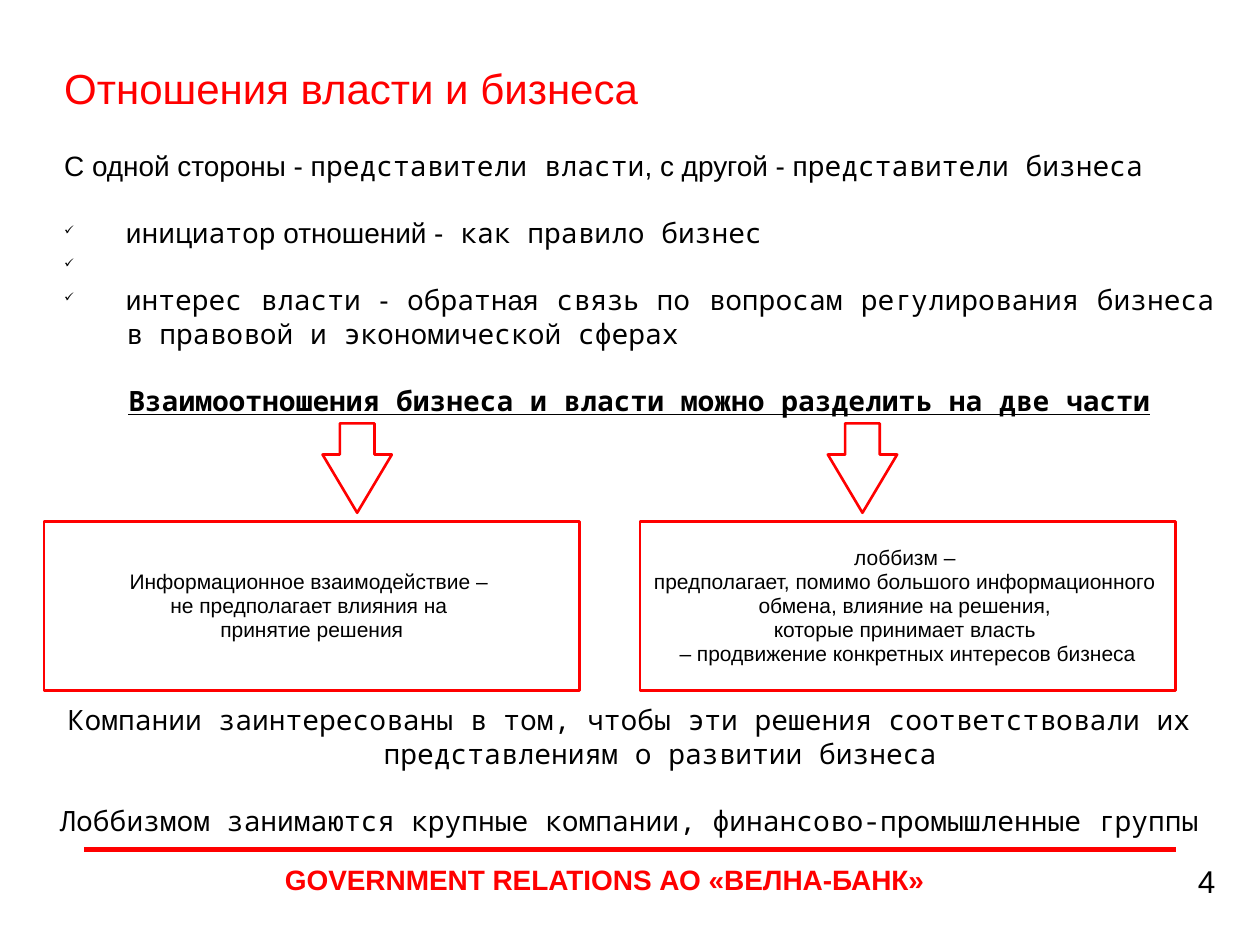
from lxml.etree import SubElement as Sub
from pptx import Presentation
from pptx.dml.color import RGBColor as RGB
from pptx.enum.shapes import MSO_CONNECTOR as CONN, MSO_SHAPE as SHAPE
from pptx.enum.text import MSO_ANCHOR as ANCHOR, PP_ALIGN as ALIGN
from pptx.oxml.ns import qn
from pptx.util import Inches, Pt

THEME = {
    "red": RGB(255, 0, 0), "black": RGB(0, 0, 0),
    "sans": "Arial", "mono": "Noto Sans Mono",
    "title": 24, "body": 16, "box": 12, "number": 18,
    "gap": 19, "outline": 1.5, "rule": 2.75,
}
SANS, MONO = THEME["sans"], THEME["mono"]

TITLE = "Отношения власти и бизнеса"
SIDES = [("С одной стороны - п", SANS), ("редставители власти", MONO),
         (", с другой - п", SANS), ("редставители бизнеса", MONO)]
POINTS = [
    [("и", SANS), ("нициатор", MONO), (" отношений -", SANS),
     (" как правило бизнес", MONO)],
    [(" ", MONO)],
    [("и", SANS), ("нтерес власти ", MONO), ("-", SANS), (" обратн", MONO),
     ("ая", SANS), (" связ", MONO), ("ь", SANS),
     (" по вопросам регулирования бизнеса в правовой и экономической сферах", MONO)],
]
SPLIT = "Взаимоотношения бизнеса и власти можно разделить на две части"
PARTS = [
    ["Информационное взаимодействие – ", "не предполагает влияния на ",
     "принятие решения"],
    ["лоббизм – ", "предполагает, помимо большого информационного ",
     "обмена, влияние на решения, ", "которые принимает власть ",
     "– продвижение конкретных интересов бизнеса"],
]
CLOSING = [
    "Компании заинтересованы в том, чтобы эти решения соответствовали их "
    "представлениям о развитии бизнеса",
    "Лоббизмом занимаются крупные компании, финансово-промышленные группы",
]
FOOTER = "GOVERNMENT RELATIONS АО «ВЕЛНА-БАНК»"
NUMBER = "4"

prs = Presentation()
prs.slide_width, prs.slide_height = Inches(10), Inches(7.5)
s = prs.slides.add_slide(prs.slide_layouts[6])
UNIT = prs.slide_width / 100


def grid(*cells):
    return [round(c * UNIT) for c in cells]


def set_frame(tf, insets, anchor=ANCHOR.TOP, wrap=True):
    tf.word_wrap, tf.vertical_anchor = wrap, anchor
    tf.margin_left, tf.margin_top, tf.margin_right, tf.margin_bottom = grid(*insets)
    return tf


def add_text(cells, insets=(0, 0.3, 0, 0), anchor=ANCHOR.TOP, wrap=True):
    return set_frame(s.shapes.add_textbox(*grid(*cells)).text_frame, insets, anchor, wrap)


def add_par(tf, runs, size, align=ALIGN.LEFT, color="black", bold=False,
            underline=False, line=None, before=0, hang=False, check=False):
    first = tf.paragraphs[0]
    p = first if not first.runs else tf.add_paragraph()
    pPr = p._p.get_or_add_pPr()
    if hang:
        indent = Inches(0.49)
        pPr.set("marL", str(indent))
        pPr.set("indent", str(-indent))
    if check:
        Sub(Sub(pPr, qn("a:buClr")), qn("a:srgbClr")).set("val", str(THEME["black"]))
        Sub(pPr, qn("a:buSzPct")).set("val", "45000")
        Sub(pPr, qn("a:buChar")).set("char", "✓")
    p.alignment = align
    if line:
        p.line_spacing = line
    if before:
        p.space_before = Pt(before)
    for text, font in runs:
        r = p.add_run()
        r.text = text
        r.font.name, r.font.size = font, Pt(THEME[size])
        r.font.color.rgb = THEME[color]
        r.font.bold, r.font.underline = bold, underline


def add_outline(kind, cells):
    sp = s.shapes.add_shape(kind, *grid(*cells))
    sp.shadow.inherit = False
    sp.fill.background()
    sp.line.color.rgb, sp.line.width = THEME["red"], Pt(THEME["outline"])
    return sp


tf = add_text((5.1, 3.6, 72.4, 7.1), (0, 0, 0, 0), ANCHOR.MIDDLE)
add_par(tf, [(TITLE, SANS)], "title", color="red", line=0.93)

gap = THEME["gap"]
tf = add_text((5.1, 11.5, 91.3, 22.8))
add_par(tf, SIDES, "body", hang=True)
for i, runs in enumerate(POINTS):
    add_par(tf, runs, "body", ALIGN.JUSTIFY, before=0 if i else gap,
            hang=True, check=True)
add_par(tf, [(SPLIT, MONO)], "body", ALIGN.CENTER, bold=True, underline=True,
        before=gap, hang=True)

rule = s.shapes.add_connector(CONN.STRAIGHT, *grid(6.7, 67.4, 93.3, 67.4))
rule.line.color.rgb, rule.line.width = THEME["red"], Pt(THEME["rule"])
Sub(rule._element.spPr, qn("a:effectLst"))

tf = add_text((2.7, 68.2, 90.6, 3.5), (1, 0.5, 1, 0.5))
add_par(tf, [(FOOTER, SANS)], "body", ALIGN.CENTER, "red", bold=True, line=0.93)

tf = add_text((4.3, 55.5, 91.3, 10.3))
for i, text in enumerate(CLOSING):
    add_par(tf, [(text, MONO)], "body", ALIGN.CENTER, before=i * gap, hang=True)

for i, lines in enumerate(PARTS):
    box = add_outline(SHAPE.RECTANGLE, (3.5 + i * 47.3, 41.4, 42.5, 13.4))
    tf = set_frame(box.text_frame, (1, 0.6, 1, 0.5), ANCHOR.MIDDLE, wrap=False)
    for text in lines:
        add_par(tf, [(text, SANS)], "box", ALIGN.CENTER, line=0.95)
    arrow = add_outline(SHAPE.DOWN_ARROW, (25.6 + i * 40.1, 33.6, 5.5, 7.1))
    arrow.adjustments[0], arrow.adjustments[1] = 0.5, 0.84

tf = add_text((94.1, 68.2, 3.4, 3.8), (1, 0.5, 1, 0.5), wrap=False)
add_par(tf, [(NUMBER, SANS)], "number", line=0.93)

prs.save("out.pptx")
